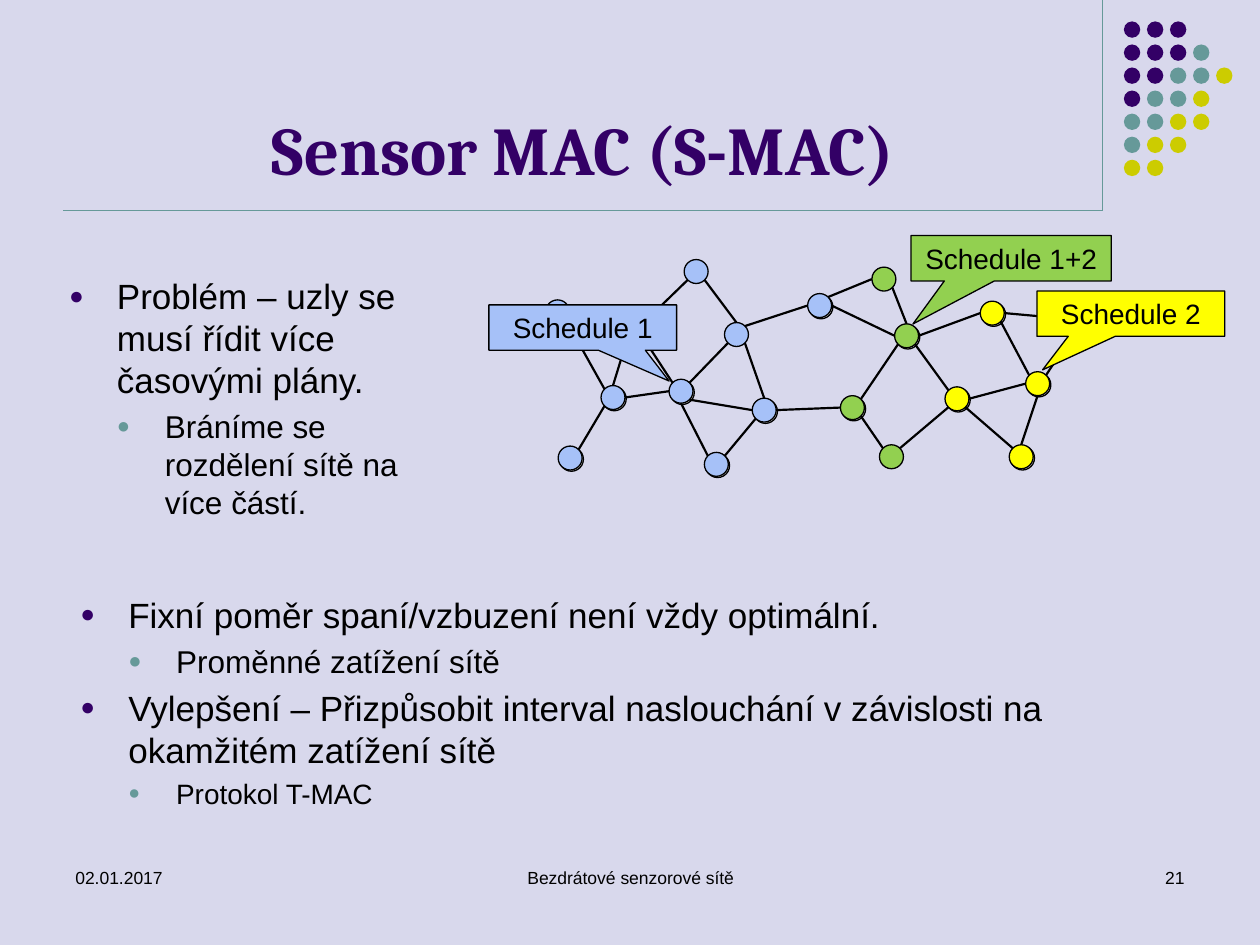
from math import sqrt
from pptx import Presentation
from pptx.dml.color import RGBColor
from pptx.enum.shapes import MSO_CONNECTOR, MSO_SHAPE as SHAPE
from pptx.enum.text import MSO_ANCHOR as ANCHOR, PP_ALIGN as ALIGN
from pptx.oxml.ns import qn
from pptx.util import Inches, Pt
from lxml.etree import SubElement

W, H = 10, 7.5
BLACK, PURPLE, TEAL, OLIVE = "000000", "330066", "669999", "CCCC00"
BLUE, YELLOW, GREEN, GREY = "A6C1F8", "FFFF00", "92D050", "D9D9D9"

# Content: (level, size, text)
PROBLEM = [(0, 20, "Problém – uzly se musí řídit více časovými plány."),
           (1, 18, "Bráníme se rozdělení sítě na více částí.")]
IMPROVEMENT = [
    (0, 20, "Fixní poměr spaní/vzbuzení není vždy optimální."),
    (1, 18, "Proměnné zatížení sítě"),
    (0, 20, "Vylepšení – Přizpůsobit interval naslouchání v závislosti na "
            "okamžitém zatížení sítě"),
    (1, 16, "Protokol T-MAC")]
FOOTER = [(0.5, 2.33, ALIGN.LEFT, "02.01.2017"),
          (3.42, 3.17, ALIGN.CENTER, "Bezdrátové senzorové sítě"),
          (7.17, 2.33, ALIGN.RIGHT, "21")]

DOT_ROWS = ["PPP", "PPPT", "PPTTY", "PTTY", "TTYY", "TYY", "YY"]
DOT_COLORS = {"P": PURPLE, "T": TEAL, "Y": OLIVE}

# Network: left and top of each node, by schedule
NODES = {
    BLUE: {"b1": (4.33, 2.38), "b2": (4.43, 3.54), "b3": (4.77, 3.06),
           "b4": (4.95, 2.53), "b5": (5.31, 3.01), "b6": (5.43, 2.06),
           "b7": (5.59, 3.59), "b8": (5.75, 2.56), "b9": (5.97, 3.16),
           "b10": (6.41, 2.33)},
    YELLOW: {"y1": (7.5, 3.07), "y2": (7.78, 2.39), "y3": (8.01, 3.53),
             "y4": (8.14, 2.95), "y5": (8.52, 2.44)},
    GREEN: {"g1": (6.67, 3.14), "g2": (6.92, 2.12), "g3": (6.98, 3.53),
            "g4": (7.1, 2.57)},
}
FLAT = {"b1", "b6", "b8", "g2", "g3"}  # nodes without a grey disc behind
EDGES = """b5 NW b4 SE, b9 W b5 SE, b5 W b3 E, b4 SW b3 N, y4 S y3 N,
    y5 SW y4 NE, b8 SW b5 NE, b10 W b8 NE, y4 W y1 E, y3 NW y1 SE,
    y1 SW g3 NE, b4 W b1 E, b3 SW b2 NE, b3 NW b1 SE, g4 SE y1 NW,
    g2 SE g4 N, b5 S b7 NW, b7 NE b9 SW, b9 E g1 W, y2 SE y4 NW,
    y2 E y5 W, g4 E y2 W, b4 NE b6 SW, b8 N b6 SE, b9 N b8 SE,
    g3 NW g1 SE, g4 SW g1 NE, g4 W b10 E, g2 W b10 NE"""
CALLOUTS = [("Schedule 1", BLUE, 3.88, 2.42, 1.49, (0.46, 1.18)),
            ("Schedule 2", YELLOW, 8.23, 2.31, 1.49, (-0.47, 1.24)),
            ("Schedule 1+2", GREEN, 7.23, 1.87, 1.59, (-0.49, 1.45))]
NODE = 0.19

prs = Presentation()
prs.slide_width, prs.slide_height = Inches(W), Inches(H)
s = prs.slides.add_slide(prs.slide_layouts[6])


def rgb(color):
    return RGBColor.from_string(color)


def add_shape(kind, x, y, w, h, fill, line=None):
    sp = s.shapes.add_shape(kind, Inches(x), Inches(y), Inches(w), Inches(h))
    sp.shadow.inherit = False
    sp.fill.solid()
    sp.fill.fore_color.rgb = rgb(fill)
    if line:
        sp.line.color.rgb = rgb(line)
        sp.line.width = Pt(0.75)
    else:
        sp.line.fill.background()
    return sp


def add_line(start, end, color, width):
    points = [Inches(v) for v in (*start, *end)]
    cxn = s.shapes.add_connector(MSO_CONNECTOR.STRAIGHT, *points)
    cxn.line.color.rgb = rgb(color)
    cxn.line.width = Pt(width)
    SubElement(cxn._element.spPr, qn("a:effectLst"))


def add_box(x, y, w, h):
    tf = s.shapes.add_textbox(Inches(x), Inches(y), Inches(w), Inches(h)).text_frame
    tf.word_wrap = True
    return tf


def add_run(p, text, size, color=BLACK, font="Arial", bold=False):
    r = p.add_run()
    r.text = text
    r.font.size, r.font.name, r.font.bold = Pt(size), font, bold
    r.font.color.rgb = rgb(color)


def add_bullets(items, *box):
    tf = add_box(*box)
    for i, (level, size, text) in enumerate(items):
        p = tf.add_paragraph() if i else tf.paragraphs[0]
        p.level = level
        p.space_before = Pt(0.2 * size)
        add_run(p, text, size)
        pPr = p._p.get_or_add_pPr()
        pPr.set("marL", str(Inches(0.38 * (level + 1))))
        pPr.set("indent", str(-Inches(0.38)))
        color = SubElement(pPr, qn("a:buClr"))
        SubElement(color, qn("a:srgbClr"), val=(PURPLE, TEAL)[level])
        SubElement(pPr, qn("a:buSzPct"), val="70000")
        SubElement(pPr, qn("a:buFont"), typeface="Arial")
        SubElement(pPr, qn("a:buChar"), char="●")


def add_nodes(color):
    for x, y in NODES[color].values():
        add_shape(SHAPE.OVAL, x, y, NODE, NODE, color, BLACK)


def site(name, side):
    """Point on a node's rim in a compass direction."""
    dx = ("E" in side) - ("W" in side)
    dy = ("S" in side) - ("N" in side)
    reach = NODE / 2 / sqrt(dx * dx + dy * dy)
    x, y = places[name]
    return x + NODE / 2 + dx * reach, y + NODE / 2 + dy * reach


# Background, rules and dot pattern
s.background.fill.solid()
s.background.fill.fore_color.rgb = rgb("D8D8EC")
corner = (8.75, 1.67)
add_line((8.75, 0), corner, TEAL, 0.75)
add_line((0.5, 1.67), corner, TEAL, 0.75)
for row, letters in enumerate(DOT_ROWS):
    for col, letter in enumerate(letters):
        add_shape(SHAPE.OVAL, 8.92 + col * 0.183, 0.17 + row * 0.183,
                  0.13, 0.13, DOT_COLORS[letter])

# Title and left text
tf = add_box(0.5, 0.13, 8.25, 1.42)
tf.vertical_anchor = ANCHOR.BOTTOM
tf.paragraphs[0].alignment = ALIGN.CENTER
add_run(tf.paragraphs[0], "Sensor MAC (S-MAC)", 39, PURPLE, "Cambria", True)
add_bullets(PROBLEM, 0.45, 2.13, 3.06, 2.11)

# Network; shared nodes lie on top of everything
places = {name: at for group in NODES.values() for name, at in group.items()}
for name, (x, y) in places.items():
    if name not in FLAT:
        add_shape(SHAPE.OVAL, x + 0.01, y + 0.01, NODE, NODE, GREY, BLACK)
add_nodes(BLUE)
add_nodes(YELLOW)
for edge in EDGES.split(","):
    a, a_side, b, b_side = edge.split()
    add_line(site(a, a_side), site(b, b_side), BLACK, 1.25)
for text, color, x, y, w, tip in CALLOUTS:
    sp = add_shape(SHAPE.RECTANGULAR_CALLOUT, x, y, w, 0.36, color, BLACK)
    sp.adjustments[0], sp.adjustments[1] = tip
    tf = sp.text_frame
    tf.word_wrap = False
    tf.vertical_anchor = ANCHOR.MIDDLE
    tf.paragraphs[0].alignment = ALIGN.CENTER
    add_run(tf.paragraphs[0], text, 16)
add_nodes(GREEN)

# Footer and lower text
for x, w, align, text in FOOTER:
    p = add_box(x, 6.83, w, 0.5).paragraphs[0]
    p.alignment = align
    add_run(p, text, 10)
add_bullets(IMPROVEMENT, 0.54, 4.66, 8.83, 1.93)

prs.save("out.pptx")
